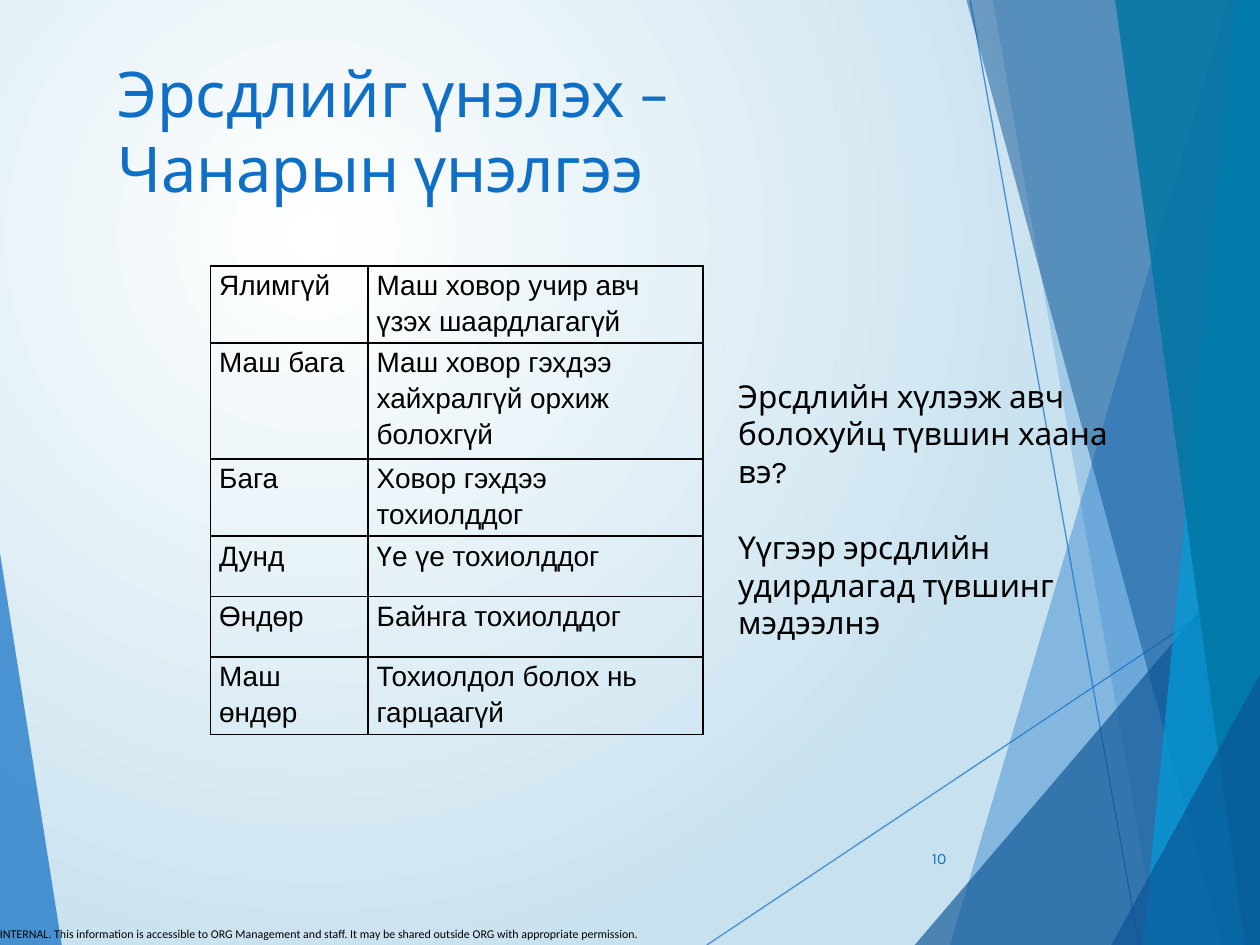
from lxml import etree
from pptx import Presentation
from pptx.dml.color import RGBColor
from pptx.enum.shapes import MSO_CONNECTOR
from pptx.enum.text import MSO_ANCHOR, PP_ALIGN
from pptx.oxml import parse_xml
from pptx.oxml.ns import nsdecls, qn
from pptx.util import Inches, Pt

STRAIGHT = MSO_CONNECTOR.STRAIGHT
TOP, MIDDLE = MSO_ANCHOR.TOP, MSO_ANCHOR.MIDDLE
LEFT, RIGHT = PP_ALIGN.LEFT, PP_ALIGN.RIGHT

BLUE = RGBColor(0x0F, 0x6F, 0xC6)
NAVY = RGBColor(0x0B, 0x53, 0x94)
CYAN = RGBColor(0x00, 0x9D, 0xD9)
TEAL = RGBColor(0x00, 0x76, 0xA3)
BLACK = RGBColor(0, 0, 0)
WHITE = RGBColor(0xFF, 0xFF, 0xFF)
PALE_BLUE = RGBColor(0xC7, 0xE1, 0xEE)

UNIT = Inches(0.01)
WIDTH, HEIGHT = 1000, 750

LEFT_WEDGE = ([(0, 439), (49, HEIGHT), (0, HEIGHT)], BLUE, 70)
RIGHT_FACETS = [
    ([(975, 0), (754, HEIGHT), (WIDTH, HEIGHT), (WIDTH, 0)], BLUE, 36),
    ([(788, 0), (919, HEIGHT), (WIDTH, HEIGHT), (WIDTH, 0)], BLUE, 20),
    ([(726, HEIGHT), (WIDTH, 429), (WIDTH, HEIGHT)], NAVY, 66),
    ([(767, 0), (970, HEIGHT), (WIDTH, HEIGHT), (WIDTH, 0)], NAVY, 50),
    ([(981, 0), (907, HEIGHT), (WIDTH, HEIGHT), (WIDTH, 0)], CYAN, 70),
    ([(885, 0), (988, HEIGHT), (WIDTH, HEIGHT), (WIDTH, 0)], TEAL, 82),
    ([(882, HEIGHT), (WIDTH, 535), (WIDTH, HEIGHT)], NAVY, 66),
]
RAYS = [((561, HEIGHT), (WIDTH, 457)), ((770, 0), (904, HEIGHT))]

LIKELIHOODS = [
    ("Ялимгүй", "Маш ховор учир авч үзэх шаардлагагүй"),
    ("Маш бага", "Маш ховор гэхдээ хайхралгүй орхиж болохгүй"),
    ("Бага", "Ховор гэхдээ тохиолддог"),
    ("Дунд", "Үе үе тохиолддог"),
    ("Өндөр", "Байнга тохиолддог"),
    ("Маш өндөр", "Тохиолдол болох нь гарцаагүй"),
]
COLUMN_WIDTHS = [125, 266]
ROW_HEIGHTS = [61, 61, 48, 48, 48, 61]


def set_background(slide):
    background = parse_xml(
        f'<p:bg {nsdecls("p", "a")}><p:bgPr><a:gradFill rotWithShape="1"><a:gsLst>'
        f'<a:gs pos="0"><a:srgbClr val="{WHITE}"/></a:gs>'
        f'<a:gs pos="100000"><a:srgbClr val="{PALE_BLUE}"/></a:gs></a:gsLst>'
        '<a:path path="circle"><a:fillToRect l="50000" t="50000" r="100000" b="100000"/>'
        '</a:path></a:gradFill><a:effectLst/></p:bgPr></p:bg>'
    )
    slide.element.cSld.insert(0, background)


def set_opacity(element, percent):
    color = element.find(".//" + qn("a:srgbClr"))
    etree.SubElement(color, qn("a:alpha"), val=str(percent * 1000))


def add_facet(slide, points, color, opacity):
    builder = slide.shapes.build_freeform(*points[0], scale=UNIT)
    builder.add_line_segments(points[1:], close=True)
    shape = builder.convert_to_shape()
    shape.shadow.inherit = False
    shape.fill.solid()
    shape.fill.fore_color.rgb = color
    shape.line.fill.background()
    set_opacity(shape.element.spPr, opacity)


def add_ray(slide, start, end):
    points = [value * UNIT for value in (*start, *end)]
    connector = slide.shapes.add_connector(STRAIGHT, *points)
    connector.line.color.rgb = BLUE
    connector.line.width = Pt(0.75)
    properties = connector.element.spPr
    set_opacity(properties, 70)
    etree.SubElement(properties, qn("a:effectLst"))


def place(shape, left, top, width, height):
    shape.left, shape.top = left * UNIT, top * UNIT
    shape.width, shape.height = width * UNIT, height * UNIT


def write(paragraph, text, size, font="Karla", color=BLACK):
    run = paragraph.add_run()
    run.text = text
    run.font.name = font
    run.font.size = Pt(size)
    run.font.color.rgb = color


def add_title(slide, text):
    title = slide.shapes.title
    place(title, 83, 38, 685, 154)
    title.text_frame.vertical_anchor = TOP
    paragraph = title.text_frame.paragraphs[0]
    paragraph.alignment = LEFT
    write(paragraph, text, 36, color=BLUE)


def add_text_frame(slide, box):
    shape = slide.shapes.add_textbox(*(value * UNIT for value in box))
    shape.text_frame.word_wrap = True
    return shape.text_frame


def add_questions(slide, texts):
    frame = add_text_frame(slide, (576, 294, 333, 192))
    for index, text in enumerate(texts):
        paragraph = frame.add_paragraph() if index else frame.paragraphs[0]
        paragraph.space_before = Pt(21.6 if index else 0)
        write(paragraph, text, 18)


def add_footer(slide, text):
    frame = add_text_frame(slide, (0, 735, 540, 11))
    frame.margin_left = frame.margin_right = 0
    frame.margin_top = frame.margin_bottom = 0
    write(frame.paragraphs[0], text, 6.8, "Calibri")


def add_page_number(slide, text):
    frame = add_text_frame(slide, (705, 661, 56, 40))
    frame.vertical_anchor = MIDDLE
    frame.paragraphs[0].alignment = RIGHT
    write(frame.paragraphs[0], text, 9, color=BLUE)


def add_cell_borders(cell):
    properties = cell._tc.get_or_add_tcPr()
    for index, side in enumerate(("lnL", "lnR", "lnT", "lnB")):
        border = parse_xml(
            f'<a:{side} {nsdecls("a")} w="12700"><a:solidFill>'
            f'<a:srgbClr val="{BLACK}"/></a:solidFill></a:{side}>'
        )
        properties.insert(index, border)


def fill_cell(cell, text):
    cell.margin_left = cell.margin_right = Inches(0.07)
    cell.margin_top = cell.margin_bottom = 0
    cell.fill.background()
    paragraph = cell.text_frame.paragraphs[0]
    paragraph.line_spacing = 1.15
    paragraph.space_before = Pt(12)
    write(paragraph, text, 16, "Arial")
    add_cell_borders(cell)


def add_likelihood_table(slide):
    box = (167, 211, sum(COLUMN_WIDTHS), sum(ROW_HEIGHTS))
    table = slide.shapes.add_table(
        len(LIKELIHOODS), len(COLUMN_WIDTHS), *(value * UNIT for value in box)
    ).table
    table.first_row = table.horz_banding = False
    for column, width in zip(table.columns, COLUMN_WIDTHS):
        column.width = width * UNIT
    for row, height, texts in zip(table.rows, ROW_HEIGHTS, LIKELIHOODS):
        row.height = height * UNIT
        for cell, text in zip(row.cells, texts):
            fill_cell(cell, text)


def main():
    presentation = Presentation()
    presentation.slide_width = WIDTH * UNIT
    presentation.slide_height = HEIGHT * UNIT
    slide = presentation.slides.add_slide(presentation.slide_layouts[5])
    set_background(slide)
    add_facet(slide, *LEFT_WEDGE)
    for start, end in RAYS:
        add_ray(slide, start, end)
    for points, color, opacity in RIGHT_FACETS:
        add_facet(slide, points, color, opacity)
    add_footer(
        slide,
        "INTERNAL. This information is accessible to ORG Management and staff. "
        "It may be shared outside ORG with appropriate permission.",
    )
    add_title(slide, "Эрсдлийг үнэлэх – Чанарын үнэлгээ")
    add_likelihood_table(slide)
    add_questions(slide, [
        "Эрсдлийн хүлээж авч болохуйц түвшин хаана вэ?",
        "Үүгээр эрсдлийн удирдлагад түвшинг мэдээлнэ",
    ])
    add_page_number(slide, "10")
    presentation.save("out.pptx")


if __name__ == "__main__":
    main()
